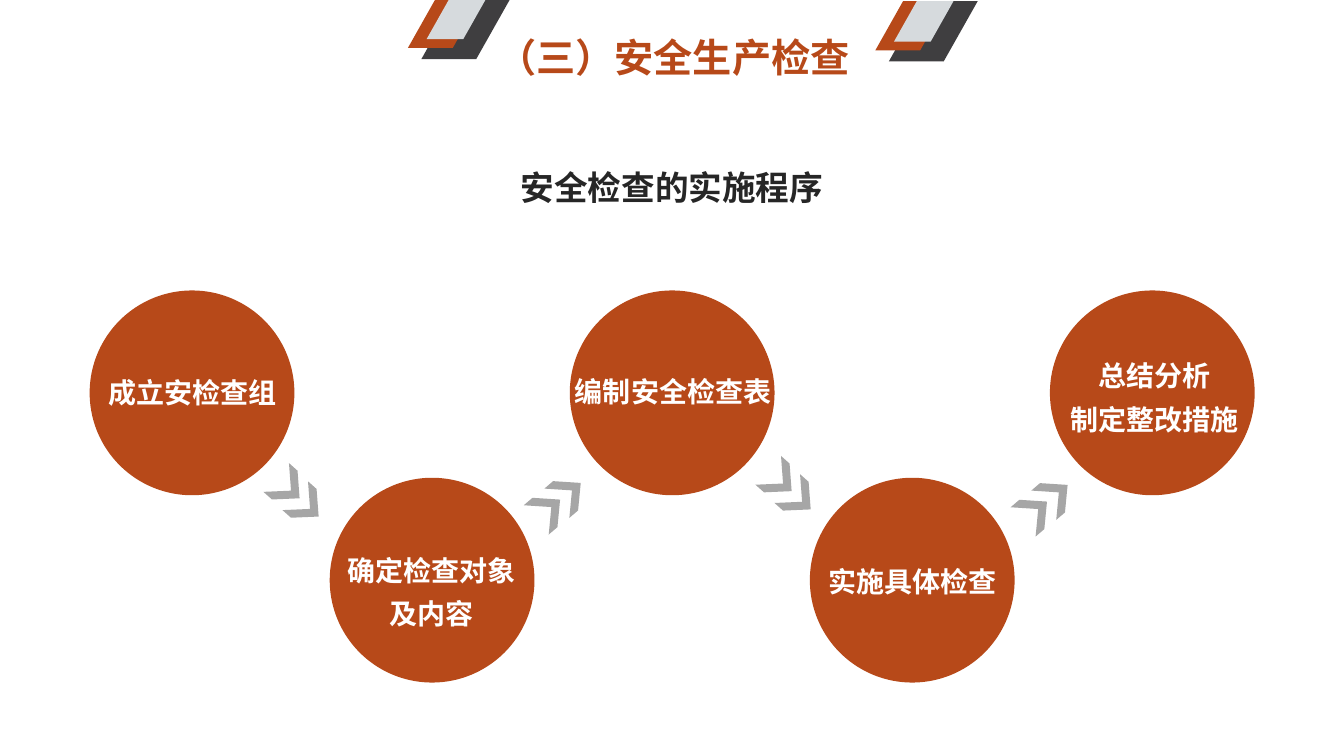
from dataclasses import dataclass

from lxml import etree
from pptx import Presentation
from pptx.dml.color import RGBColor
from pptx.enum import shapes, text
from pptx.oxml import ns
from pptx.util import Cm, Pt

FONT = "Noto Sans CJK SC"
RUST, GREY, DARK, PALE = "B74919", "A6A6A6", "3F3E40", "D6DADD"
SHAPE = shapes.MSO_SHAPE


@dataclass
class Step:
    label: str
    left: float
    top: float
    width: float
    height: float
    spacing: float = 1.3


@dataclass
class Arrow:
    left: float
    top: float
    down: bool


@dataclass
class Layer:
    dx: float
    width: float
    height: float
    fill: str


STEPS = [
    Step("成立安检查组", 1.98, 9.35, 5.74, 1.12, 1.0),
    Step("确定检查对象及内容", 8.43, 13.56, 4.88, 2.36),
    Step("编制安全检查表", 13.46, 9.07, 7.01, 1.37),
    Step("实施具体检查", 20.12, 13.84, 5.77, 1.37),
    Step("总结分析\n制定整改措施", 26.21, 8.66, 5.77, 2.49),
]
ARROWS = [
    Arrow(7.34, 12.27, True),
    Arrow(13.94, 11.94, False),
    Arrow(19.74, 12.09, True),
    Arrow(26.21, 11.99, False),
]
LAYERS = [
    Layer(0, 2.24, 1.52, DARK),
    Layer(-0.34, 1.83, 1.24, RUST),
    Layer(0.13, 1.5, 1.02, PALE),
]


def color(value: str) -> RGBColor:
    return RGBColor.from_string(value)


def add_figure(parent, kind, left: float, top: float, width: float, height: float,
               fill: str, adj: float | None = None, rotation: float = 0) -> None:
    sp = parent.add_shape(kind, Cm(left), Cm(top), Cm(width), Cm(height))
    sp.shadow.inherit = False
    sp.fill.solid()
    sp.fill.fore_color.rgb = color(fill)
    sp.line.fill.background()
    sp.rotation = rotation
    if adj is not None:
        sp.adjustments[0] = adj


def add_text(s, content: str, *, left: float, top: float, width: float, height: float,
             size: float = 20, fill: str = "FFFFFF", spacing: float = 1.0) -> None:
    tf = s.shapes.add_textbox(Cm(left), Cm(top), Cm(width), Cm(height)).text_frame
    tf.word_wrap = True
    tf.auto_size = text.MSO_AUTO_SIZE.SHAPE_TO_FIT_TEXT
    tf.text = content
    for p in tf.paragraphs:
        p.alignment = text.PP_ALIGN.CENTER
        p.line_spacing = spacing
        for r in p.runs:
            r.font.size = Pt(size)
            r.font.bold = True
            r.font.color.rgb = color(fill)
            r.font.name = FONT
            ea = etree.SubElement(r.font._element, ns.qn("a:ea"))
            ea.set("typeface", FONT)


def add_arrow(s, arrow: Arrow) -> None:
    group = s.shapes.add_group_shape().shapes
    dx, dy, angle = (-0.48, -0.46, 41.6) if arrow.down else (-0.52, 0.42, 319.6)
    for n in range(2):
        add_figure(group, SHAPE.CHEVRON, arrow.left + n * dx, arrow.top + n * dy,
                   0.79, 0.97, GREY, 0.633, angle)


def add_ornament(s, left: float, top: float) -> None:
    group = s.shapes.add_group_shape().shapes
    for layer in LAYERS:
        add_figure(group, SHAPE.PARALLELOGRAM, left + layer.dx, top,
                   layer.width, layer.height, layer.fill, 0.564)


def main() -> None:
    prs = Presentation()
    prs.slide_width, prs.slide_height = Cm(33.87), Cm(19.05)
    s = prs.slides.add_slide(prs.slide_layouts[6])
    for i in range(len(STEPS)):
        add_figure(s.shapes, SHAPE.OVAL, 2.26 + 6.05 * i, 12.04 if i % 2 else 7.32,
                   5.16, 5.16, RUST)
    for arrow in ARROWS:
        add_arrow(s, arrow)
    for step in STEPS:
        add_text(s, step.label, left=step.left, top=step.top, width=step.width,
                 height=step.height, spacing=step.spacing)
    add_text(s, "安全检查的实施程序", left=12.4, top=4.09, width=9.07, height=1.3,
             size=24, fill="262626")
    add_text(s, "（三）安全生产检查", left=12.22, top=0.71, width=9.5, height=1.45,
             size=28, fill=RUST)
    add_ornament(s, 10.62, -0.03)
    add_ornament(s, 22.4, 0.03)
    prs.save("out.pptx")


if __name__ == "__main__":
    main()
